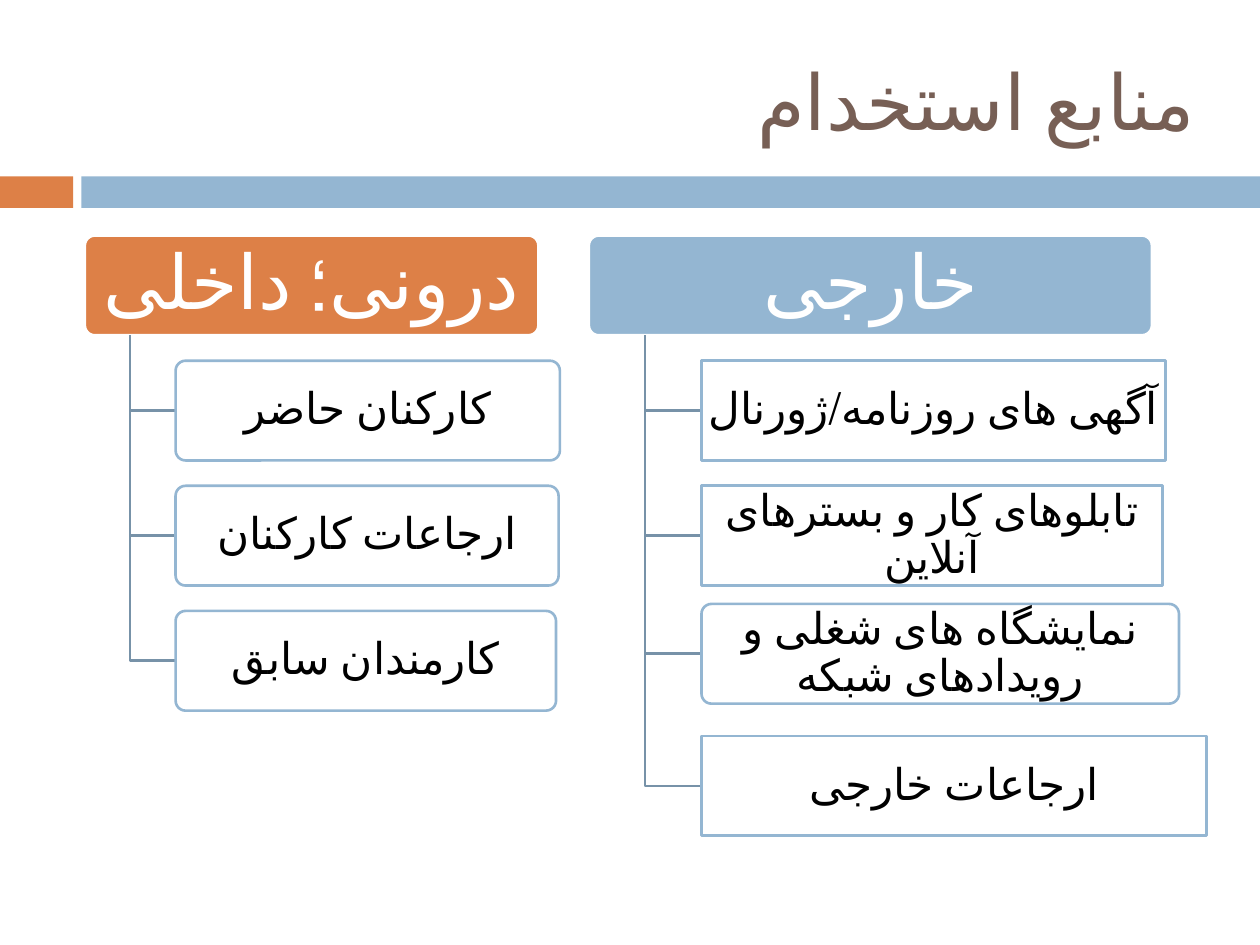
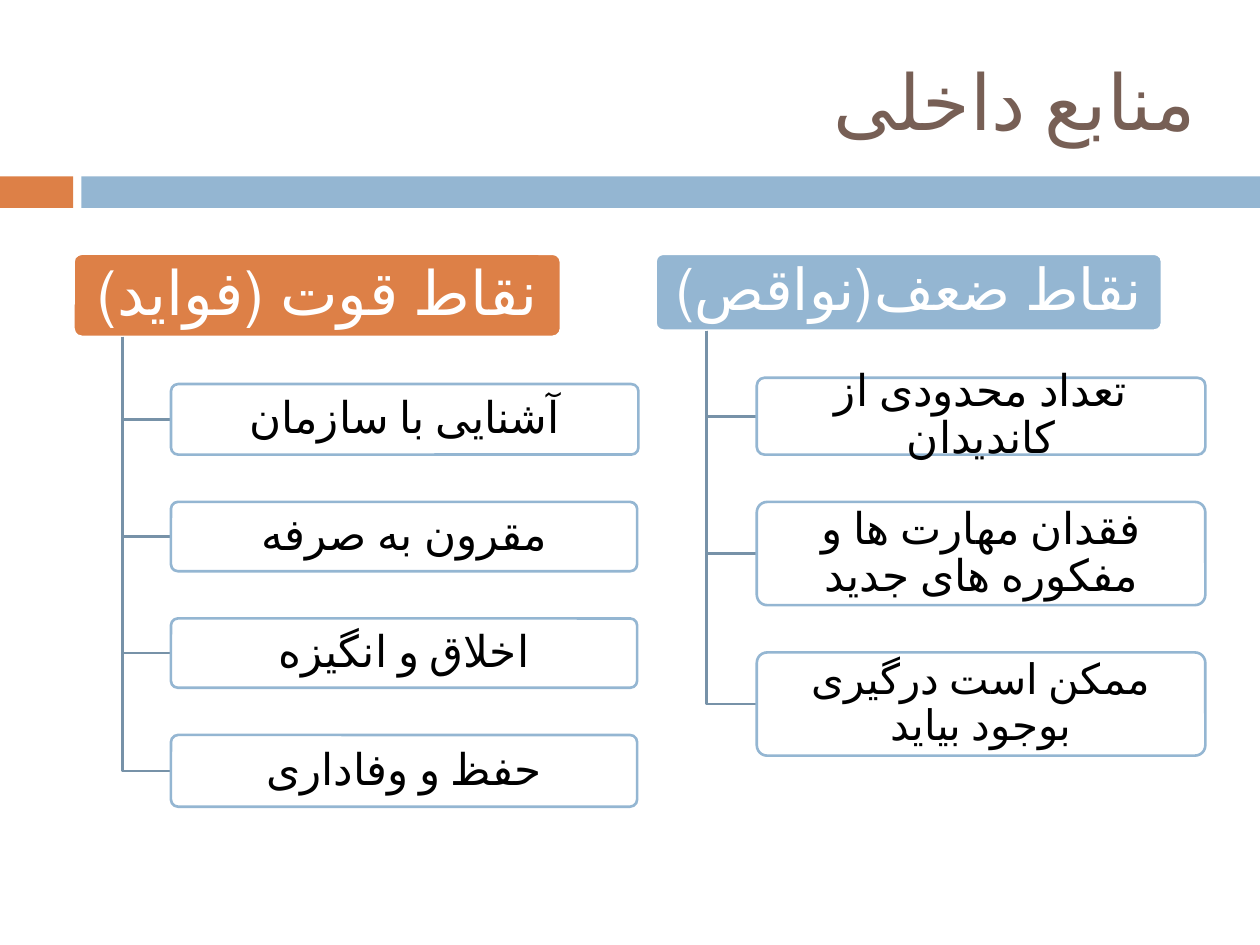
"""Build two slides of grouped lists on recruitment sources."""
from lxml import etree
from pptx import Presentation
from pptx.dml.color import RGBColor
from pptx.enum import shapes, text
from pptx.oxml import ns
from pptx.util import Pt

ORANGE = RGBColor(0xDD, 0x80, 0x47)
BLUE = RGBColor(0x94, 0xB6, 0xD2)
BROWN = RGBColor(0x77, 0x5F, 0x55)
STEEL = RGBColor(0x77, 0x92, 0xA8)
WHITE = RGBColor(255, 255, 255)
BLACK = RGBColor(0, 0, 0)
FONT = "Calibri"
ROUND = shapes.MSO_SHAPE.ROUNDED_RECTANGLE
RECT = shapes.MSO_SHAPE.RECTANGLE
CENTER = text.PP_ALIGN.CENTER
RIGHT = text.PP_ALIGN.RIGHT


def draw(slide, kind, area, fill, edge=None):
    """Add a filled preset shape, with an outline if an edge colour is given."""
    shape = slide.shapes.add_shape(kind, *map(Pt, area))
    shape.shadow.inherit = False
    shape.fill.solid()
    shape.fill.fore_color.rgb = fill
    if kind == ROUND:
        shape.adjustments[0] = 0.1
    if edge is None:
        shape.line.fill.background()
    else:
        shape.line.color.rgb = edge
        shape.line.width = Pt(1.5)
    return shape


def write(shape, words, size, color, pad, align=CENTER, space=0.9):
    """Put one right-to-left paragraph into a shape."""
    side, end = map(Pt, pad)
    frame = shape.text_frame
    form = {"word_wrap": True, "vertical_anchor": text.MSO_ANCHOR.MIDDLE,
            "margin_left": side, "margin_right": side,
            "margin_top": end, "margin_bottom": end}
    for name, value in form.items():
        setattr(frame, name, value)
    para = frame.paragraphs[0]
    para.alignment = align
    para.line_spacing = space
    para._p.get_or_add_pPr().set("rtl", "1")
    run = para.add_run()
    run.text = words
    run.font.size = Pt(size)
    run.font.name = FONT
    run.font.color.rgb = color
    run._r.get_or_add_rPr().set("lang", "fa-IR")


BANDS = [((0, 100.8, 41.8, 18), ORANGE), ((46.5, 100.8, 673.5, 18), BLUE)]

# Each column: heading, area, fill, size, padding, gap, cards.
# Each card: words, width, height, size, kind, shift.
SLIDES = [
    ("منابع استخدام", [
        ("درونی؛ داخلی", (48.5, 134.6, 259.2, 57), ORANGE, 43, (6.5, 4.3), 14.5, [
            ("کارکنان حاضر", 219.6, 57, 25, ROUND, 0),
            ("ارجاعات کارکنان", 218.9, 57, 25, ROUND, 0),
            ("کارمندان سابق", 217.4, 57, 25, ROUND, 0)]),
        ("خارجی", (336.5, 134.6, 321.8, 57), BLUE, 43, (6.5, 4.3), 14.5, [
            ("آگهی های روزنامه/ژورنال", 265, 57, 25, RECT, 0),
            ("تابلوهای کار و بسترهای آنلاین", 263.5, 57, 25, RECT, 0),
            ("نمایشگاه های شغلی و رویدادهای شبکه", 272.9, 57, 25, ROUND, -4),
            ("ارجاعات خارجی", 288.7, 57, 25, RECT, 0)])]),
    ("منابع داخلی", [
        ("نقاط قوت (فواید)", (42, 145, 278.6, 47.5), ORANGE, 35, (5, 3.6), 27, [
            ("آشنایی با سازمان", 267.1, 40.3, 25, ROUND, 0),
            ("مقرون به صرفه", 266.4, 39.6, 25, ROUND, 0),
            ("اخلاق و انگیزه", 266.4, 39.6, 25, ROUND, 0),
            ("حفظ و وفاداری", 266.4, 41, 25, ROUND, 0)]),
        ("نقاط ضعف(نواقص)", (374.6, 145, 289.4, 43.9), BLUE, 33, (5, 3.6), 27, [
            ("تعداد محدودی از کاندیدان", 256.3, 43.9, 25, ROUND, 0),
            ("فقدان مهارت ها و مفکوره های جدید", 256.3, 59, 25, ROUND, 0),
            ("ممکن است درگیری بوجود بیاید", 256.3, 59, 24, ROUND, 0)])]),
]

deck = Presentation()
deck.slide_width, deck.slide_height = Pt(720), Pt(540)

for title, columns in SLIDES:
    slide = deck.slides.add_slide(deck.slide_layouts[6])
    for area, fill in BANDS:
        draw(slide, RECT, area, fill)
    box = slide.shapes.add_textbox(Pt(48.2), Pt(18), Pt(642.2), Pt(77.8))
    write(box, title, 44, BROWN, (7.2, 3.6), RIGHT, 1.0)

    for heading, area, fill, size, pad, gap, cards in columns:
        left, top, width, height = area
        head = draw(slide, ROUND, area, fill, WHITE)
        write(head, heading, size, WHITE, pad)
        base = top + height
        stem, start = left + width / 10, left + width / 5
        y = base + gap
        for words, wide, high, size, kind, shift in cards:
            place = y + shift
            middle = place + high / 2
            path = slide.shapes.build_freeform(Pt(stem), Pt(base))
            path.add_line_segments(
                [(Pt(stem), Pt(middle)), (Pt(start), Pt(middle))], close=False)
            elbow = path.convert_to_shape()
            elbow.shadow.inherit = False
            elbow.fill.background()
            elbow.line.color.rgb = STEEL
            elbow.line.width = Pt(1.5)

            card = draw(slide, kind, (start, place, wide, high), WHITE, BLUE)
            tint = card._element.spPr.find(ns.qn("a:solidFill"))[0]
            etree.SubElement(tint, ns.qn("a:alpha")).set("val", "90000")
            write(card, words, size, BLACK, (3.6, 2.2))
            y += high + gap

deck.save("out.pptx")
